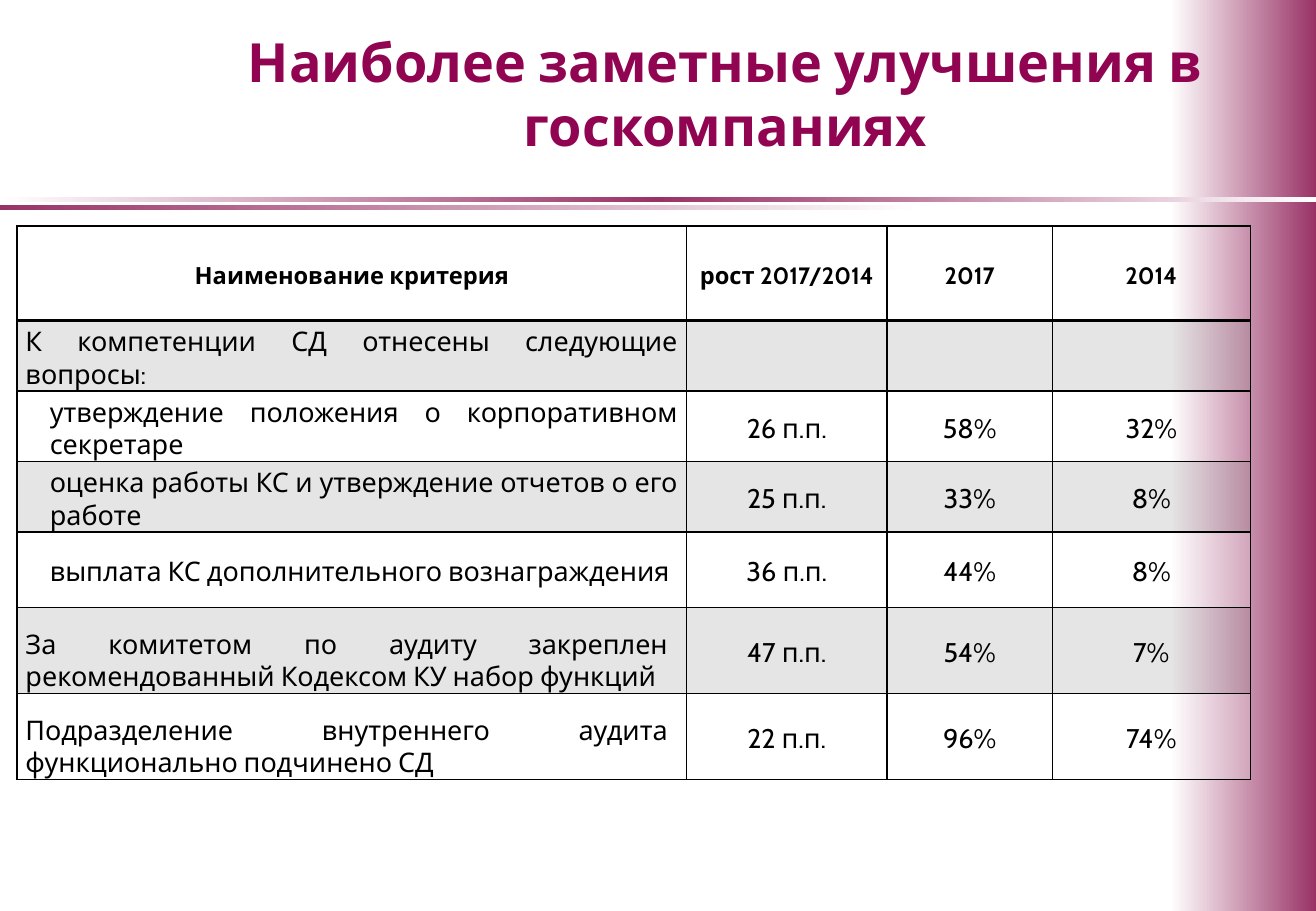
"""Builds the slide on the most visible improvements in state companies."""
from dataclasses import dataclass

from pptx import Presentation
from pptx.dml.color import RGBColor
from pptx.enum.shapes import MSO_SHAPE
from pptx.enum.text import MSO_ANCHOR, PP_ALIGN
from pptx.oxml import parse_xml
from pptx.oxml.ns import nsdecls, qn
from pptx.util import Inches, Pt

RECTANGLE = MSO_SHAPE.RECTANGLE
MIDDLE, BOTTOM = MSO_ANCHOR.MIDDLE, MSO_ANCHOR.BOTTOM
CENTER, JUSTIFY = PP_ALIGN.CENTER, PP_ALIGN.JUSTIFY
FONT = "Cabin"
WINE, PLUM, WHITE, BLACK, GRAY = "900451", "993366", "FFFFFF", "000000", "808080"
TITLE_ONLY = 5


@dataclass
class Band:
    left: float
    top: float
    width: float
    height: float
    colors: tuple


@dataclass
class Criterion:
    name: str
    values: tuple
    height: float
    fill: str = ""
    indent: float = 0
    anchor: MSO_ANCHOR = BOTTOM
    right_margin: float = 0.07


BANDS = (
    Band(9.63, 0, 1.2, 7.5, (WHITE, PLUM)),
    Band(0, 1.62, 10.83, 0.04, (WHITE, PLUM, WHITE)),
    Band(0, 1.69, 7.58, 0.04, (PLUM, WHITE)),
)
HEADER_HEIGHT = 0.78
HEADERS = ("Наименование критерия", "рост 2017/2014", "2017", "2014")
COLUMN_WIDTHS = (5.51, 1.65, 1.36, 1.63)
CRITERIA = (
    Criterion("К компетенции СД отнесены следующие вопросы:", ("", "", ""), 0.58, GRAY),
    Criterion("утверждение положения о корпоративном секретаре",
              ("26 п.п.", "58%", "32%"), 0.58, indent=0.2),
    Criterion("оценка работы КС и утверждение отчетов о его работе",
              ("25 п.п.", "33%", "8%"), 0.58, GRAY, 0.2),
    Criterion("выплата КС дополнительного вознаграждения",
              ("36 п.п.", "44%", "8%"), 0.62, WHITE, 0.2, MIDDLE),
    Criterion("За комитетом по аудиту закреплен рекомендованный Кодексом КУ набор функций",
              ("47 п.п.", "54%", "7%"), 0.71, GRAY, right_margin=0.15),
    Criterion("Подразделение внутреннего аудита функционально подчинено СД",
              ("22 п.п.", "96%", "74%"), 0.71, WHITE, right_margin=0.15),
)


def rgb(color: str) -> RGBColor:
    """Turn a hex string into a colour."""
    return RGBColor.from_string(color)


def write(box, text: str, size: int, color: str, bold: bool, align: PP_ALIGN) -> None:
    """Write one formatted paragraph into a text frame."""
    para = box.paragraphs[0]
    para.alignment = align
    if not text:
        return
    span = para.add_run()
    span.text = text
    for name, value in {"name": FONT, "size": Pt(size), "bold": bold}.items():
        setattr(span.font, name, value)
    span.font.color.rgb = rgb(color)


def add_band(page, band: Band) -> None:
    """Draw a rectangle with an even left-to-right gradient."""
    sides = (band.left, band.top, band.width, band.height)
    shape = page.shapes.add_shape(RECTANGLE, *map(Inches, sides))
    shape.shadow.inherit = False
    shape.line.fill.background()
    shape.fill.gradient()
    shape.fill.gradient_angle = 0
    stops = next(shape.element.iter(qn("a:gsLst")))
    for stop in list(stops):
        stops.remove(stop)
    for index, color in enumerate(band.colors):
        position = index * 100000 // (len(band.colors) - 1)
        stops.append(parse_xml(
            f'<a:gs {nsdecls("a")} pos="{position}"><a:srgbClr val="{color}"/></a:gs>'))


def add_title(page, text: str) -> None:
    """Place the title in front of the bands."""
    title = page.shapes.title
    place = {"left": 1.34, "top": 0, "width": 9.26, "height": 1.53}
    for name, value in place.items():
        setattr(title, name, Inches(value))
    title.text_frame.word_wrap = True
    title.text_frame.vertical_anchor = MIDDLE
    write(title.text_frame, text, 32, WINE, True, CENTER)
    page.shapes.element.append(title.element)


def set_borders(cell, top: float, bottom: float) -> None:
    """Give a cell black borders with one-point sides."""
    properties = cell._tc.get_or_add_tcPr()
    for side, width in {"L": 1, "R": 1, "T": top, "B": bottom}.items():
        properties.append(parse_xml(
            f'<a:ln{side} {nsdecls("a")} w="{Pt(width)}"><a:solidFill>'
            f'<a:srgbClr val="{BLACK}"/></a:solidFill></a:ln{side}>'))


def set_fill(cell, color: str) -> None:
    """Fill a cell with a one-fifth tint, or leave it clear."""
    if not color:
        cell.fill.background()
        return
    cell.fill.solid()
    cell.fill.fore_color.rgb = rgb(color)
    tint = cell._tc.tcPr.find(qn("a:solidFill")).find(qn("a:srgbClr"))
    tint.append(parse_xml(f'<a:alpha {nsdecls("a")} val="20000"/>'))


def format_cell(cell, anchor: MSO_ANCHOR, left: float = 0.07, right: float = 0.07) -> None:
    """Set the anchor and margins of a cell."""
    formats = {"vertical_anchor": anchor, "margin_left": Inches(left),
               "margin_right": Inches(right), "margin_top": Inches(0.04),
               "margin_bottom": 0}
    for name, value in formats.items():
        setattr(cell, name, value)


def add_criteria_table(page) -> None:
    """Add the table of criteria and their growth."""
    height = HEADER_HEIGHT + sum(criterion.height for criterion in CRITERIA)
    table = page.shapes.add_table(
        len(CRITERIA) + 1, len(HEADERS), Inches(0.14), Inches(1.86),
        Inches(sum(COLUMN_WIDTHS)), Inches(height)).table
    table.first_row = table.horz_banding = False
    for column, width in zip(table.columns, COLUMN_WIDTHS):
        column.width = Inches(width)
    table.rows[0].height = Inches(HEADER_HEIGHT)
    for cell, text in zip(table.rows[0].cells, HEADERS):
        format_cell(cell, MIDDLE)
        set_borders(cell, 1, 2)
        set_fill(cell, "")
        write(cell.text_frame, text, 14, BLACK, True, CENTER)
    for index, criterion in enumerate(CRITERIA, 1):
        row = table.rows[index]
        row.height = Inches(criterion.height)
        for column, text in enumerate((criterion.name, *criterion.values)):
            cell = row.cells[column]
            if column == 0:
                format_cell(cell, criterion.anchor, 0.07 + criterion.indent,
                            criterion.right_margin)
            else:
                format_cell(cell, MIDDLE)
            set_borders(cell, 2 if index == 1 else 1, 1)
            set_fill(cell, criterion.fill)
            write(cell.text_frame, text, 16, BLACK, False, CENTER if column else JUSTIFY)


def main() -> None:
    """Build and save the deck."""
    deck = Presentation()
    deck.slide_width, deck.slide_height = Inches(10.83), Inches(7.5)
    page = deck.slides.add_slide(deck.slide_layouts[TITLE_ONLY])
    for band in BANDS:
        add_band(page, band)
    add_title(page, "Наиболее заметные улучшения в госкомпаниях")
    add_criteria_table(page)
    deck.save("out.pptx")


if __name__ == "__main__":
    main()
